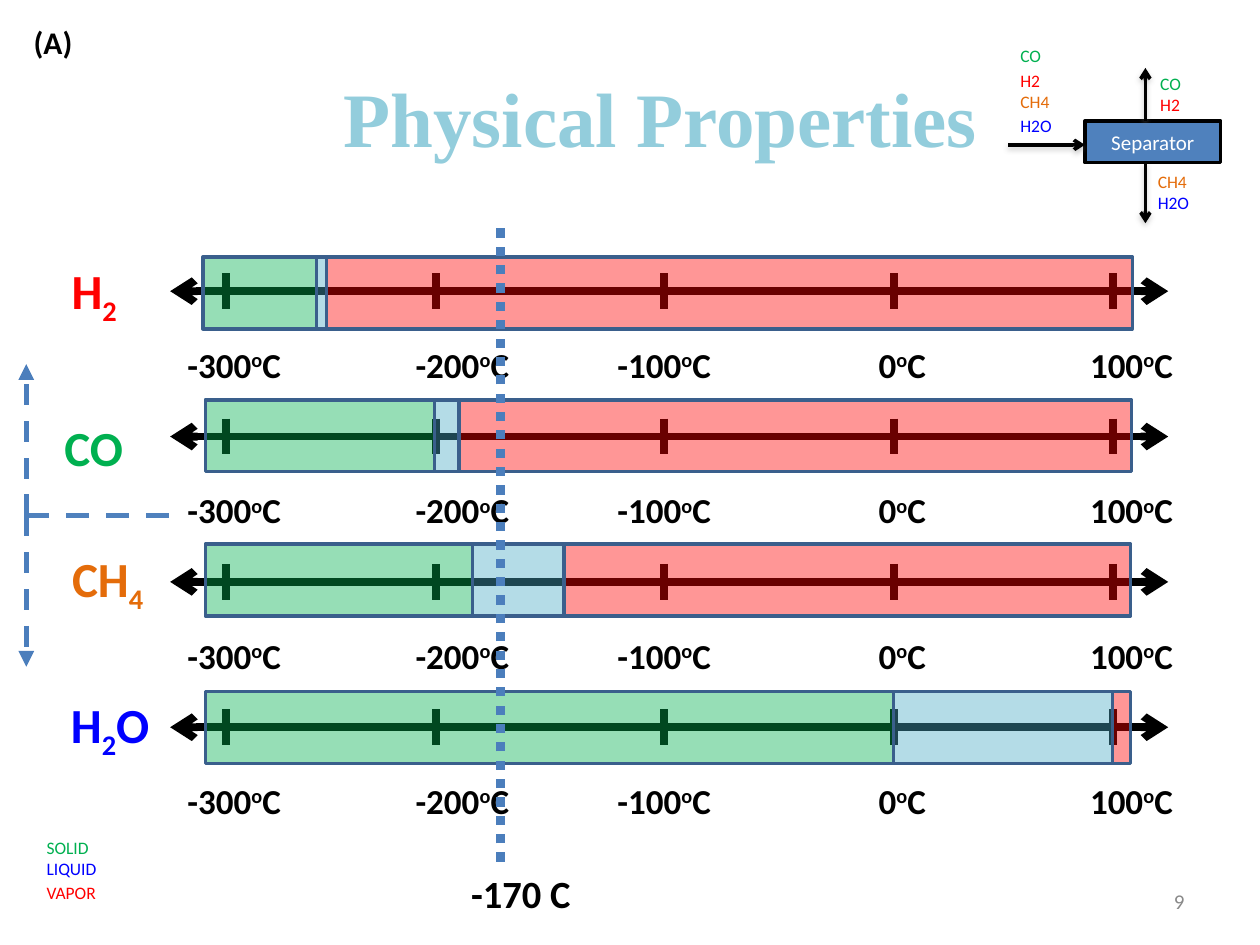
import pptx
import pptx.dml.color
import pptx.enum.dml
import pptx.enum.shapes
import pptx.enum.text
import pptx.oxml.ns
import pptx.util
from lxml import etree

Cm = pptx.util.Cm
Pt = pptx.util.Pt
ALIGN = pptx.enum.text.PP_ALIGN
ANCHOR = pptx.enum.text.MSO_ANCHOR
DASH = pptx.enum.dml.MSO_LINE

COLORS = {
    "black": "000000", "white": "FFFFFF", "title": "93CDDC", "green": "00B050",
    "red": "FF0000", "orange": "E46C0A", "blue": "0000FF", "liquid": "4BACC6",
    "outline": "3A5F8C", "accent": "4F81BD", "marker": "4B7EBC",
    "gray": "898989", "shadow": "808080",
}
TICKS = [1.12, 5.36, 9.96, 14.60, 19.00]
LABELS = [("-300", 1.29), ("-200", 5.89), ("-100", 9.96), ("0", 14.76), ("100", 19.38)]
SUBSTANCES = [
    {"name": [("H", 0), ("2", -25000)], "color": "red", "name_at": (-3.42, -0.73),
     "bar_top": -0.69, "edges": [0.66, 2.95, 3.15, 19.40]},
    {"name": [("CO", 0)], "color": "green", "name_at": (-3.43, -0.57),
     "bar_top": -0.74, "edges": [0.71, 5.33, 5.83, 19.38]},
    {"name": [("CH", 0), ("4", -25000)], "color": "orange", "name_at": (-3.15, -0.78),
     "bar_top": -0.76, "edges": [0.71, 6.10, 7.94, 19.36]},
    {"name": [("H", 0), ("2", -25000), ("O", 0)], "color": "blue", "name_at": (-3.10, -0.77),
     "bar_top": -0.72, "edges": [0.71, 14.58, 19.00, 19.36]},
]
AXIS_PITCH = 2.93


def set_attributes(target, values):
    for name, value in values.items():
        setattr(target, name, value)


def rgb(color):
    return pptx.dml.color.RGBColor.from_string(COLORS[color])


def add_element(parent, tag, **attributes):
    element = etree.SubElement(parent, pptx.oxml.ns.qn(tag))
    for name, value in attributes.items():
        element.set(name, str(value))
    return element


def write_text(shape, paragraphs, size, align=ALIGN.LEFT, anchor=ANCHOR.TOP,
               bold=False, font="Calibri"):
    frame = shape.text_frame
    set_attributes(frame, {"word_wrap": True, "vertical_anchor": anchor})
    for index, (runs, color, space) in enumerate(paragraphs):
        paragraph = frame.add_paragraph() if index else frame.paragraphs[0]
        set_attributes(paragraph, {"alignment": align, "space_before": Pt(space)})
        for text, baseline in runs:
            run = paragraph.add_run()
            run.text = text
            set_attributes(run.font, {"size": Pt(size), "bold": bold, "name": font})
            run.font.color.rgb = rgb(color)
            if baseline:
                run.font._element.set("baseline", str(baseline))


def add_text(slide, box, paragraphs, size, **formats):
    shape = slide.shapes.add_textbox(*map(Cm, box))
    write_text(shape, paragraphs, size, **formats)


def plain(text, color, space=0):
    return [(text, 0)], color, space


def add_line(slide, start, end, color, width, dash=None, head=None, tail=None, shadow=False):
    connector = slide.shapes.add_connector(
        pptx.enum.shapes.MSO_CONNECTOR.STRAIGHT, *map(Cm, start + end))
    connector.line.color.rgb = rgb(color)
    set_attributes(connector.line, {"width": Pt(width), "dash_style": dash})
    outline = connector.line._get_or_add_ln()
    for tag, kind in (("a:headEnd", head), ("a:tailEnd", tail)):
        if kind:
            add_element(outline, tag, type=kind)
    effects = add_element(connector._element.spPr, "a:effectLst")
    if shadow:
        outer = add_element(effects, "a:outerShdw", blurRad=Pt(3.1), dist=Pt(1.6),
                            dir=5400000, rotWithShape=0)
        shade = add_element(outer, "a:srgbClr", val=COLORS["shadow"])
        add_element(shade, "a:alpha", val=38000)


def add_rectangle(slide, box, fill, outline, opacity=None):
    shape = slide.shapes.add_shape(
        pptx.enum.shapes.MSO_SHAPE.RECTANGLE, *map(Cm, box))
    shape.shadow.inherit = False
    shape.fill.solid()
    shape.fill.fore_color.rgb = rgb(fill)
    shape.line.color.rgb = rgb(outline)
    shape.line.width = Pt(2)
    if opacity:
        color = shape._element.spPr.find(".//" + pptx.oxml.ns.qn("a:srgbClr"))
        add_element(color, "a:alpha", val=opacity * 1000)
    return shape


def add_temperature_row(slide, box, substance):
    left, axis, width, height = box
    add_line(slide, (left, axis), (left + width, axis), "black", 4.5,
             head="arrow", tail="arrow")
    for tick in TICKS:
        add_line(slide, (left + tick, axis - height / 4), (left + tick, axis + height / 4),
                 "black", 4.5)
    for number, center in LABELS:
        runs = [(number, 0), ("o", 30000), ("C", 0)]
        add_text(slide, (left + center - 1.65, axis + 0.79, 3.3, 1.37),
                 [(runs, "black", 0)], 20, align=ALIGN.CENTER, anchor=ANCHOR.MIDDLE, bold=True)
    name_left, name_top = substance["name_at"]
    add_text(slide, (left + name_left, axis + name_top, 3.78, 1.57),
             [(substance["name"], substance["color"], 0)], 28,
             align=ALIGN.CENTER, anchor=ANCHOR.MIDDLE, bold=True)
    edges = substance["edges"]
    for color, start, end in zip(("green", "liquid", "red"), edges, edges[1:]):
        add_rectangle(slide, (left + start, axis + substance["bar_top"], end - start, height),
                      color, "outline", 41)


def add_cut_marker(slide, box):
    left, top, width, height = box
    add_line(slide, (left + 0.84, top + height), (left + 0.84, top), "marker", 5.25,
             dash=DASH.ROUND_DOT)
    add_text(slide, (left, top + height + 0.05, width, 1.19),
             [plain("-170 C", "black")], 22, bold=True)


def add_separator_diagram(slide, box):
    left, top, width, height = box
    center = left + 2.77
    unit = add_rectangle(slide, (left + 1.55, top + 1.65, 2.74, 0.84), "accent", "black")
    write_text(unit, [plain("Separator", "white")], 12,
               align=ALIGN.CENTER, anchor=ANCHOR.MIDDLE)
    flows = [
        ((center, top + 2.51), (center, top + height)),
        ((center, top + 1.65), (center, top + 0.58)),
        ((left, top + 2.13), (left + 1.55, top + 2.13)),
    ]
    for start, end in flows:
        add_line(slide, start, end, "black", 2, tail="arrow", shadow=True)
    add_text(slide, (center, top + 2.54, 1.3, 1.12),
             [plain("CH4", "orange"), plain("H2O", "blue")], 10)
    add_text(slide, (center + 0.05, top + 0.56, 1.47, 1.12),
             [plain("CO", "green"), plain("H2", "red")], 10)
    add_text(slide, (left, top, 1.47, 2.57),
             [plain("CO", "green"), plain("H2", "red", 2),
              plain("CH4", "orange"), plain("H2O", "blue", 2)], 10)


def add_split_bracket(slide, box):
    left, top, width, height = box
    middle = top + height / 2
    add_line(slide, (left, middle), (left + width, middle), "accent", 3.25, dash=DASH.DASH)
    for end in (top, top + height):
        add_line(slide, (left, middle), (left, end), "marker", 3,
                 dash=DASH.DASH, tail="triangle")


def add_captions(slide, box):
    left, top, width, height = box
    add_text(slide, (left + 1.27, top + 0.76, 24.1, 3.18),
             [plain("Physical Properties", "title")], 44, align=ALIGN.CENTER,
             anchor=ANCHOR.MIDDLE, bold=True, font="Times New Roman")
    add_text(slide, (left + 0.43, top + 0.33, 1.47, 1.02),
             [plain("(A)", "black")], 18, bold=True)
    add_text(slide, (left + 0.69, top + height - 2.31, 2.97, 1.63),
             [plain("SOLID", "green"), plain("LIQUID", "blue"), plain("VAPOR", "red", 2)], 10)
    add_text(slide, (left + width - 7.19, top + height - 1.4, 5.92, 1.02),
             [plain("9", "gray")], 12, align=ALIGN.RIGHT, anchor=ANCHOR.MIDDLE)


def main():
    presentation = pptx.Presentation()
    set_attributes(presentation, {"slide_width": Cm(25.4), "slide_height": Cm(19.05)})
    slide = presentation.slides.add_slide(presentation.slide_layouts[6])
    add_captions(slide, (0, 0, 25.4, 19.05))
    for index, substance in enumerate(SUBSTANCES):
        add_temperature_row(slide, (3.43, 5.87 + index * AXIS_PITCH, 20.12, 1.45), substance)
    add_cut_marker(slide, (9.25, 4.42, 2.97, 12.95))
    add_separator_diagram(slide, (20.32, 0.79, 4.29, 3.71))
    add_split_bracket(slide, (0.53, 7.34, 3.1, 6.1))
    presentation.save("out.pptx")


if __name__ == "__main__":
    main()
